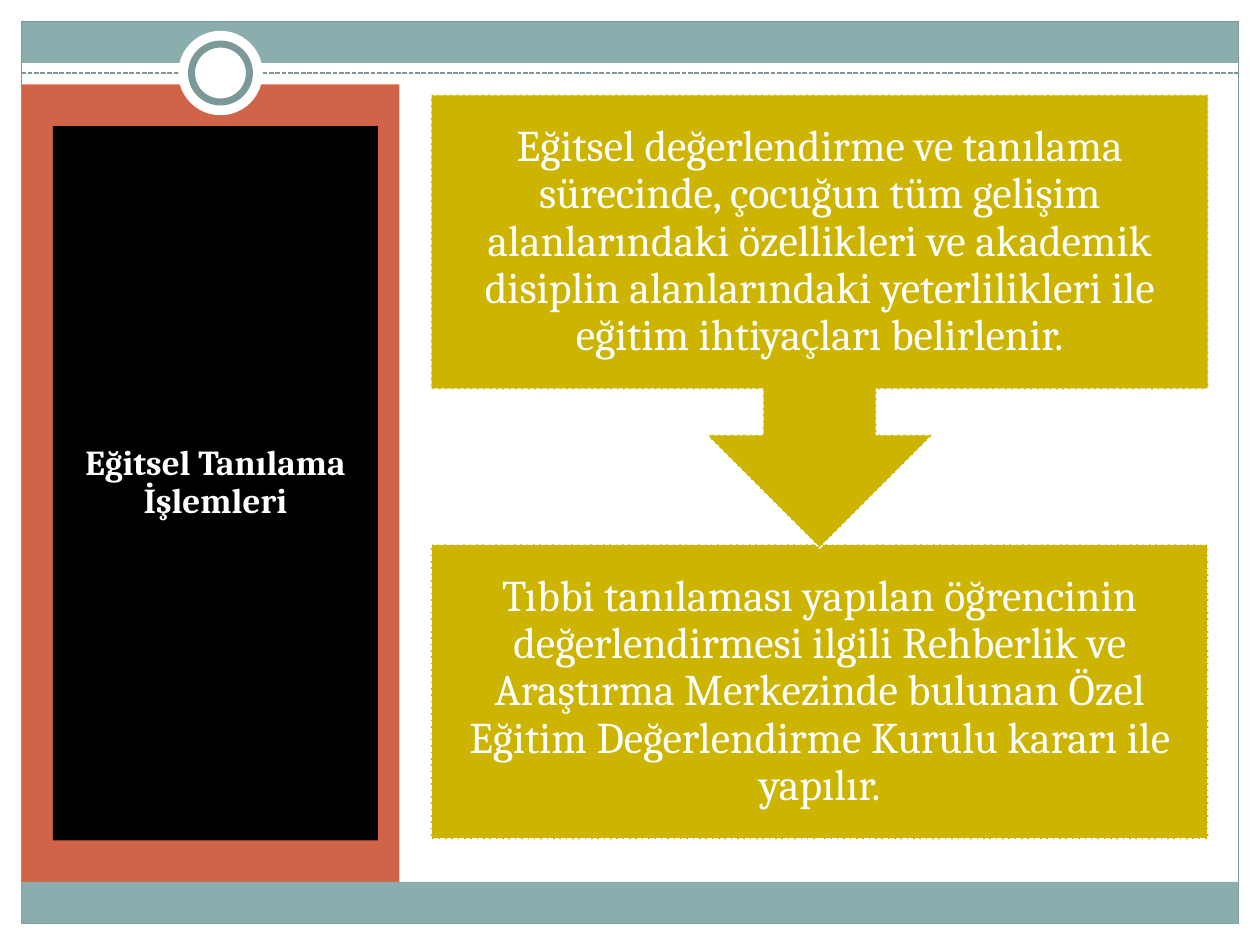
import pptx
import pptx.util
import pptx.dml.color
import pptx.enum.dml
import pptx.enum.shapes
import pptx.enum.text
import pptx.oxml.ns
import lxml.etree

TITLE = "Eğitsel Tanılama İşlemleri"
STEPS = [
    "Eğitsel değerlendirme ve tanılama sürecinde, çocuğun tüm gelişim alanlarındaki "
    "özellikleri ve akademik disiplin alanlarındaki yeterlilikleri ile eğitim "
    "ihtiyaçları belirlenir.",
    "Tıbbi tanılaması yapılan öğrencinin değerlendirmesi ilgili Rehberlik ve Araştırma "
    "Merkezinde bulunan Özel Eğitim Değerlendirme Kurulu kararı ile yapılır.",
]
COLORS = {"band": "8CADAE", "rule": "7C999A", "panel": "D16349",
          "title": "000000", "step": "CCB400", "white": "FFFFFF"}
FONT = "Cambria"
WIDTH, HEIGHT, MARGIN = 10, 7.5, 0.17
INNER = WIDTH - 2 * MARGIN
BAND, PANEL_TOP, RULE_Y = 0.33, 0.67, 0.58
BOTTOM = HEIGHT - MARGIN
RING_X = 1.75
STEP_LEFT, STEP_TOP, STEP_WIDTH, STEP_HEIGHT = 3.42, 0.75, 6.17, 2.34
STEP_PITCH, CALLOUT_HEIGHT = 3.57, 3.6

SHAPES = pptx.enum.shapes.MSO_SHAPE
DASH = pptx.enum.dml.MSO_LINE.SQUARE_DOT


def color(name):
    return pptx.dml.color.RGBColor.from_string(COLORS[name])


def inches(*lengths):
    return [pptx.util.Inches(length) for length in lengths]


def style_line(line, name, width, dash=None):
    line.color.rgb = color(name)
    line.width = pptx.util.Pt(width)
    if dash is not None:
        line.dash_style = dash


def add_shape(page, kind, place, fill=None, line=None, width=0.75, dash=None):
    shape = page.shapes.add_shape(kind, *inches(*place))
    shape.shadow.inherit = False
    if fill:
        shape.fill.solid()
        shape.fill.fore_color.rgb = color(fill)
    else:
        shape.fill.background()
    if line:
        style_line(shape.line, line, width, dash)
    else:
        shape.line.fill.background()
    return shape


def write(box, text, size, bold=False, inset=0.1):
    frame = box.text_frame
    frame.word_wrap = True
    frame.auto_size = pptx.enum.text.MSO_AUTO_SIZE.NONE
    frame.vertical_anchor = pptx.enum.text.MSO_ANCHOR.MIDDLE
    frame.margin_left = frame.margin_right = pptx.util.Inches(inset)
    frame.margin_top = frame.margin_bottom = pptx.util.Inches(inset)
    para = frame.paragraphs[0]
    para.alignment = pptx.enum.text.PP_ALIGN.CENTER
    para.line_spacing = 0.9
    span = para.add_run()
    span.text = text
    span.font.name = FONT
    span.font.size = pptx.util.Pt(size)
    span.font.bold = bold
    span.font.color.rgb = color("white")


def add_frame(page):
    add_shape(page, SHAPES.RECTANGLE, (MARGIN, MARGIN, INNER, BAND), "band")
    add_shape(page, SHAPES.RECTANGLE,
              (MARGIN, PANEL_TOP, 3, BOTTOM - BAND - PANEL_TOP), "panel")
    add_shape(page, SHAPES.RECTANGLE,
              (MARGIN, MARGIN, INNER, HEIGHT - 2 * MARGIN), line="rule")
    rule = page.shapes.add_connector(
        pptx.enum.shapes.MSO_CONNECTOR.STRAIGHT,
        *inches(MARGIN, RULE_Y, WIDTH - MARGIN, RULE_Y))
    style_line(rule.line, "rule", 0.9, DASH)
    lxml.etree.SubElement(rule.element.spPr, pptx.oxml.ns.qn("a:effectLst"))
    for size, line in ((0.67, None), (0.46, "rule")):
        add_shape(page, SHAPES.OVAL,
                  (RING_X - size / 2, RULE_Y - size / 2, size, size),
                  "white", line, 4)
    add_shape(page, SHAPES.RECTANGLE, (MARGIN, BOTTOM - BAND, INNER, BAND), "band")


def add_title(page):
    title = page.shapes.title
    title.left, title.top, title.width, title.height = inches(0.42, 1, 2.58, 5.67)
    title.fill.solid()
    title.fill.fore_color.rgb = color("title")
    write(title, TITLE, 20, bold=True)
    page.shapes.element.append(title.element)


def add_steps(page):
    last = len(STEPS) - 1
    for index, text in reversed(list(enumerate(STEPS))):
        top = STEP_TOP + index * STEP_PITCH
        kind, height, turn = SHAPES.UP_ARROW_CALLOUT, CALLOUT_HEIGHT, 180
        if index == last:
            kind, height, turn = SHAPES.RECTANGLE, STEP_HEIGHT, 0
        shape = add_shape(page, kind, (STEP_LEFT, top, STEP_WIDTH, height),
                          "step", "white", 0.9, DASH)
        shape.rotation = turn
        box = page.shapes.add_textbox(*inches(STEP_LEFT, top, STEP_WIDTH, STEP_HEIGHT))
        write(box, text, 25, inset=0.19)


def main():
    deck = pptx.Presentation()
    deck.slide_width, deck.slide_height = inches(WIDTH, HEIGHT)
    page = deck.slides.add_slide(deck.slide_layouts[5])
    add_frame(page)
    add_title(page)
    add_steps(page)
    deck.save("out.pptx")


if __name__ == "__main__":
    main()
